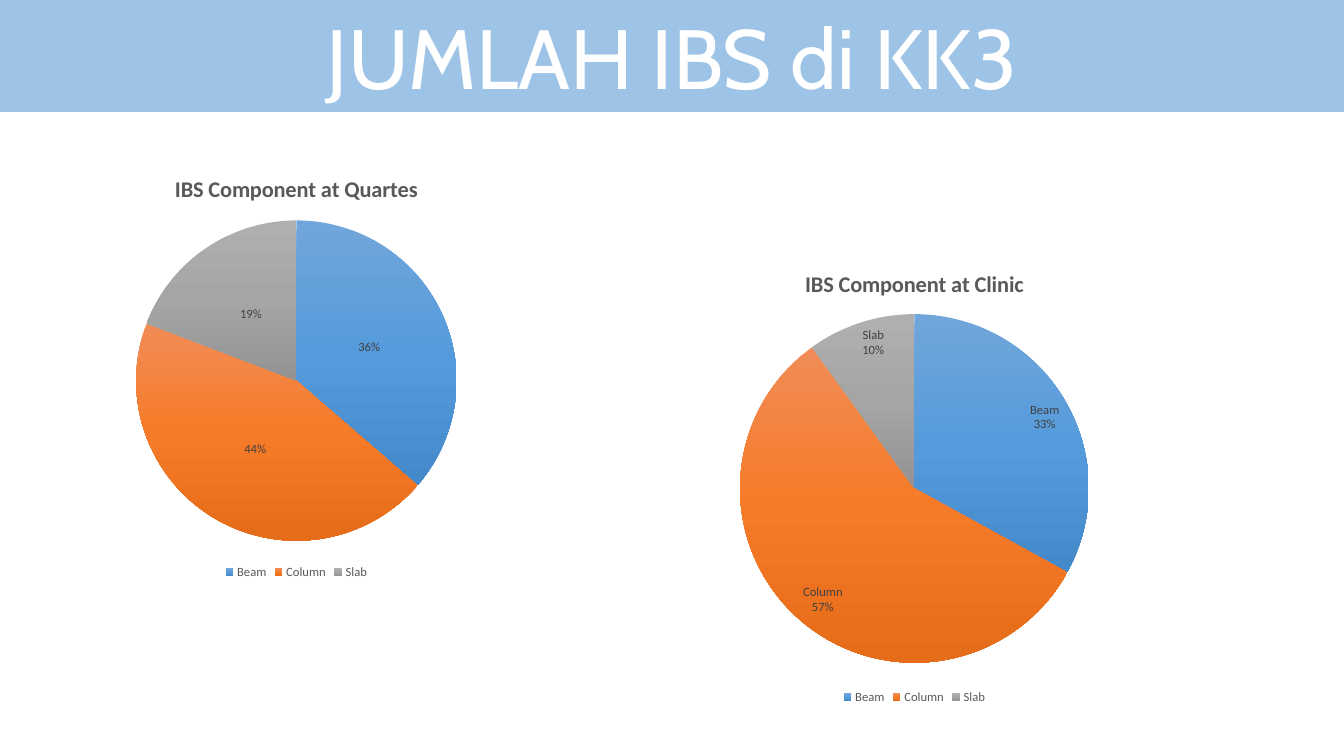
"""Build a slide with a title band and two pie charts of IBS components."""
from copy import deepcopy

from pptx import Presentation
from pptx.chart.data import CategoryChartData
from pptx.dml.color import RGBColor
from pptx.enum.chart import XL_CHART_TYPE, XL_LABEL_POSITION, XL_LEGEND_POSITION
from pptx.enum.text import MSO_ANCHOR, PP_ALIGN
from pptx.oxml import parse_xml
from pptx.oxml.ns import nsdecls
from pptx.util import Inches, Pt

PIE = XL_CHART_TYPE.PIE
BOTTOM = XL_LEGEND_POSITION.BOTTOM
MID = XL_LABEL_POSITION.CENTER
EDGE = XL_LABEL_POSITION.INSIDE_END

HUES = {
    "band": "9DC3E6", "white": "FFFFFF", "black": "000000",
    "grey": "595959", "label": "404040",
    "Beam": ("71A6DB", "559BDB", "448ACA"),
    "Column": ("F18C57", "F67B28", "E56C19"),
    "Slab": ("AFAFAF", "A5A5A5", "939393"),
}
PARTS = ("Beam", "Column", "Slab")


def style(font, size, hue, face="Calibri", bold=False):
    font.size, font.name, font.bold = Pt(size), face, bold
    font.color.rgb = RGBColor.from_string(HUES[hue])


def write(frame, text, **look):
    frame.text = text
    line = frame.paragraphs[0]
    line.alignment = PP_ALIGN.CENTER
    style(line.runs[0].font, **look)


deck = Presentation()
deck.slide_width, deck.slide_height = Inches(13.33), Inches(7.5)
slide = deck.slides.add_slide(deck.slide_layouts[5])

band = slide.shapes.title
band.left, band.top = 0, 0
band.width, band.height = deck.slide_width, Inches(1.11)
band.fill.solid()
band.fill.fore_color.rgb = RGBColor.from_string(HUES["band"])
band.text_frame.vertical_anchor = MSO_ANCHOR.MIDDLE
write(band.text_frame, "JUMLAH IBS di KK3", size=60, hue="white", face="Cabin")

PIES = (
    ("Quartes", (36, 44, 19), (0.2, 1.55, 5.48, 4.24), (0.21, 0.15, 0.58, 0.75), MID, False),
    ("Clinic", (33, 57, 10), (5.28, 2.48, 7.58, 4.55), (0.27, 0.14, 0.46, 0.76), EDGE, True),
)
for place, vals, box, area, spot, named in PIES:
    data = CategoryChartData()
    data.categories = PARTS
    data.add_series("Series 1", vals)
    chart = slide.shapes.add_chart(PIE, *map(Inches, box), data).chart
    style(chart.font, 10, "black")
    chart.has_title = True
    write(chart.chart_title.text_frame, f"IBS Component at {place}",
          size=16, hue="grey", bold=True)
    chart.chart_title.include_in_layout = False
    chart.has_legend = True
    chart.legend.position = BOTTOM
    chart.legend.include_in_layout = False
    style(chart.legend.font, 9, "grey")

    plot = chart.plots[0]
    plot.vary_by_categories = True
    plot.has_data_labels = True
    labels = plot.data_labels
    labels.show_percentage, labels.show_value = True, False
    labels.show_category_name = named
    labels.number_format, labels.number_format_is_linked = "0%", False
    labels.position = spot
    style(labels.font, 9, "label")
    if named:
        gap = parse_xml(f'<c:separator {nsdecls("c")}>\n</c:separator>')
        labels._element.xpath("c:showBubbleSize")[0].addnext(gap)

    for i, part in enumerate(PARTS):
        look = plot.series[0].points[i].format
        look.line.fill.background()
        look.fill.gradient()
        look.fill.gradient_angle = 270
        ramp = chart.element.xpath(".//a:gsLst")[-1]
        ramp.insert(1, deepcopy(ramp[0]))
        for k, stop in enumerate(look.fill.gradient_stops):
            stop.position = k / 2
            stop.color.rgb = RGBColor.from_string(HUES[part][k])

    zone = chart.element.xpath(".//c:plotArea")[0]
    for old in zone.xpath("c:layout"):
        zone.remove(old)
    modes = '<c:layoutTarget val="inner"/><c:xMode val="edge"/><c:yMode val="edge"/>'
    sizes = "".join(f'<c:{key} val="{val}"/>' for key, val in zip("xywh", area))
    zone.insert(0, parse_xml(
        f'<c:layout {nsdecls("c")}><c:manualLayout>{modes}{sizes}</c:manualLayout></c:layout>'))

deck.save("out.pptx")
